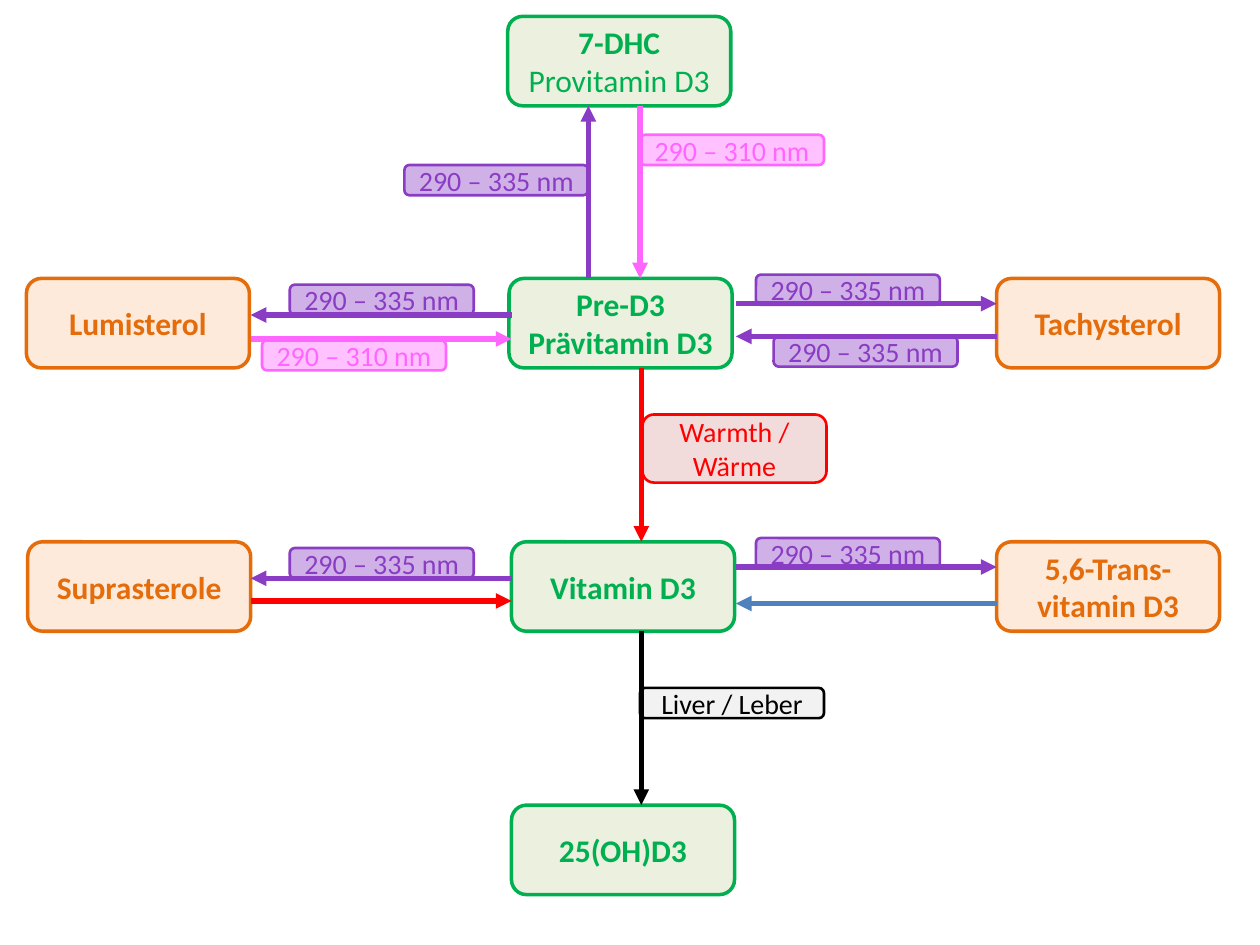
from lxml.etree import SubElement
from pptx import Presentation
from pptx.dml.color import RGBColor
from pptx.enum.shapes import MSO_CONNECTOR, MSO_SHAPE
from pptx.enum.text import MSO_ANCHOR, PP_ALIGN
from pptx.oxml.ns import qn
from pptx.util import Inches, Pt

GREEN, ORANGE = "00B050", "E46C0A"
VIOLET, PINK, RED, BLUE, BLACK = "8A3CC4", "FF66FF", "FF0000", "4F81BD", "000000"
PALE = {GREEN: "EBF1DE", ORANGE: "FDEADA", RED: "F2DCDB", BLACK: "F2F2F2"}

# Substances: left, top, colour, lines as (text, bold)
BOX_W, BOX_H = 1.77, 0.71
ROWS = [0.13, 2.21, 4.30, 6.39]
SUBSTANCES = [
    (4.03, ROWS[0], GREEN, [("7-DHC", True), ("Provitamin D3", False)]),
    (4.04, ROWS[1], GREEN, [("Pre-D3", True), ("Prävitamin D3", True)]),
    (4.06, ROWS[2], GREEN, [("Vitamin D3", True)]),
    (4.06, ROWS[3], GREEN, [("25(OH)D3", True)]),
    (0.21, ROWS[1], ORANGE, [("Lumisterol", True)]),
    (7.91, ROWS[1], ORANGE, [("Tachysterol", True)]),
    (0.22, ROWS[2], ORANGE, [("Suprasterole", True)]),
    (7.91, ROWS[2], ORANGE, [("5,6-Trans-vitamin D3", True)]),
]

# Reaction conditions: left, top, height, colour, text
LABEL_W, LABEL_H = 1.46, 0.24
LONG_UV, SHORT_UV = "290 – 335 nm", "290 – 310 nm"
CONDITIONS = [
    (5.08, 1.07, LABEL_H, PINK, SHORT_UV),
    (3.21, 1.31, LABEL_H, VIOLET, LONG_UV),
    (2.30, 2.26, LABEL_H, VIOLET, LONG_UV),
    (2.08, 2.70, LABEL_H, PINK, SHORT_UV),
    (6.00, 2.18, LABEL_H, VIOLET, LONG_UV),
    (6.14, 2.67, LABEL_H, VIOLET, LONG_UV),
    (5.10, 3.29, 0.54, RED, "Warmth / Wärme"),
    (2.30, 4.35, LABEL_H, VIOLET, LONG_UV),
    (6.00, 4.27, LABEL_H, VIOLET, LONG_UV),
    (5.08, 5.46, LABEL_H, BLACK, "Liver / Leber"),
]

# Reactions: horizontal as (from x, to x, y, colour), vertical as (x, from y, to y, colour)
LEFT_GAP, RIGHT_GAP = (1.99, 4.06), (5.84, 7.91)
HORIZONTAL = [
    (*LEFT_GAP[::-1], 2.50, VIOLET),
    (*LEFT_GAP, 2.69, PINK),
    (*RIGHT_GAP, 2.41, VIOLET),
    (*RIGHT_GAP[::-1], 2.67, VIOLET),
    (*LEFT_GAP[::-1], 4.59, VIOLET),
    (*LEFT_GAP, 4.77, RED),
    (*RIGHT_GAP, 4.50, VIOLET),
    (*RIGHT_GAP[::-1], 4.79, BLUE),
]
VERTICAL = [
    (4.67, ROWS[1], ROWS[0] + BOX_H, VIOLET),
    (5.08, ROWS[0] + BOX_H, ROWS[1], PINK),
    (5.09, ROWS[1] + BOX_H, ROWS[2], RED),
    (5.09, ROWS[2] + BOX_H, ROWS[3], BLACK),
]


def rgb(value):
    return RGBColor.from_string(value)


def add_box(slide, left, top, width, height, color, lines, size, border):
    box = slide.shapes.add_shape(MSO_SHAPE.ROUNDED_RECTANGLE, Inches(left), Inches(top),
                                 Inches(width), Inches(height))
    box.shadow.inherit = False
    box.fill.solid()
    box.fill.fore_color.rgb = rgb(PALE.get(color, color))
    if color not in PALE:  # no pale tint: the colour itself at 40 % opacity
        tint = box.fill._xPr.find(qn("a:solidFill"))[0]
        SubElement(tint, qn("a:alpha"), val="40000")
    box.line.color.rgb = rgb(color)
    box.line.width = Pt(border)

    frame = box.text_frame
    frame.word_wrap = True
    frame.vertical_anchor = MSO_ANCHOR.MIDDLE
    for i, (text, bold) in enumerate(lines):
        paragraph = frame.add_paragraph() if i else frame.paragraphs[0]
        paragraph.text = text
        paragraph.alignment = PP_ALIGN.CENTER
        font = paragraph.font
        font.name, font.size, font.bold = "Calibri", Pt(size), bold
        font.color.rgb = rgb(color)


def add_arrow(slide, x1, y1, x2, y2, color):
    arrow = slide.shapes.add_connector(MSO_CONNECTOR.STRAIGHT, Inches(x1), Inches(y1),
                                       Inches(x2), Inches(y2))
    arrow.line.color.rgb = rgb(color)
    arrow.line.width = Pt(3)
    SubElement(arrow.line._get_or_add_ln(), qn("a:tailEnd"), type="triangle")
    SubElement(arrow._element.spPr, qn("a:effectLst"))


def main():
    deck = Presentation()
    deck.slide_width, deck.slide_height = Inches(10), Inches(7.5)
    slide = deck.slides.add_slide(deck.slide_layouts[6])

    # Boxes and labels first, arrows on top
    for left, top, color, lines in SUBSTANCES:
        add_box(slide, left, top, BOX_W, BOX_H, color, lines, 18, 2)
    for left, top, height, color, text in CONDITIONS:
        add_box(slide, left, top, LABEL_W, height, color, [(text, False)], 16, 1.5)
    for x1, x2, y, color in HORIZONTAL:
        add_arrow(slide, x1, y, x2, y, color)
    for x, y1, y2, color in VERTICAL:
        add_arrow(slide, x, y1, x, y2, color)

    deck.save("out.pptx")


if __name__ == "__main__":
    main()
